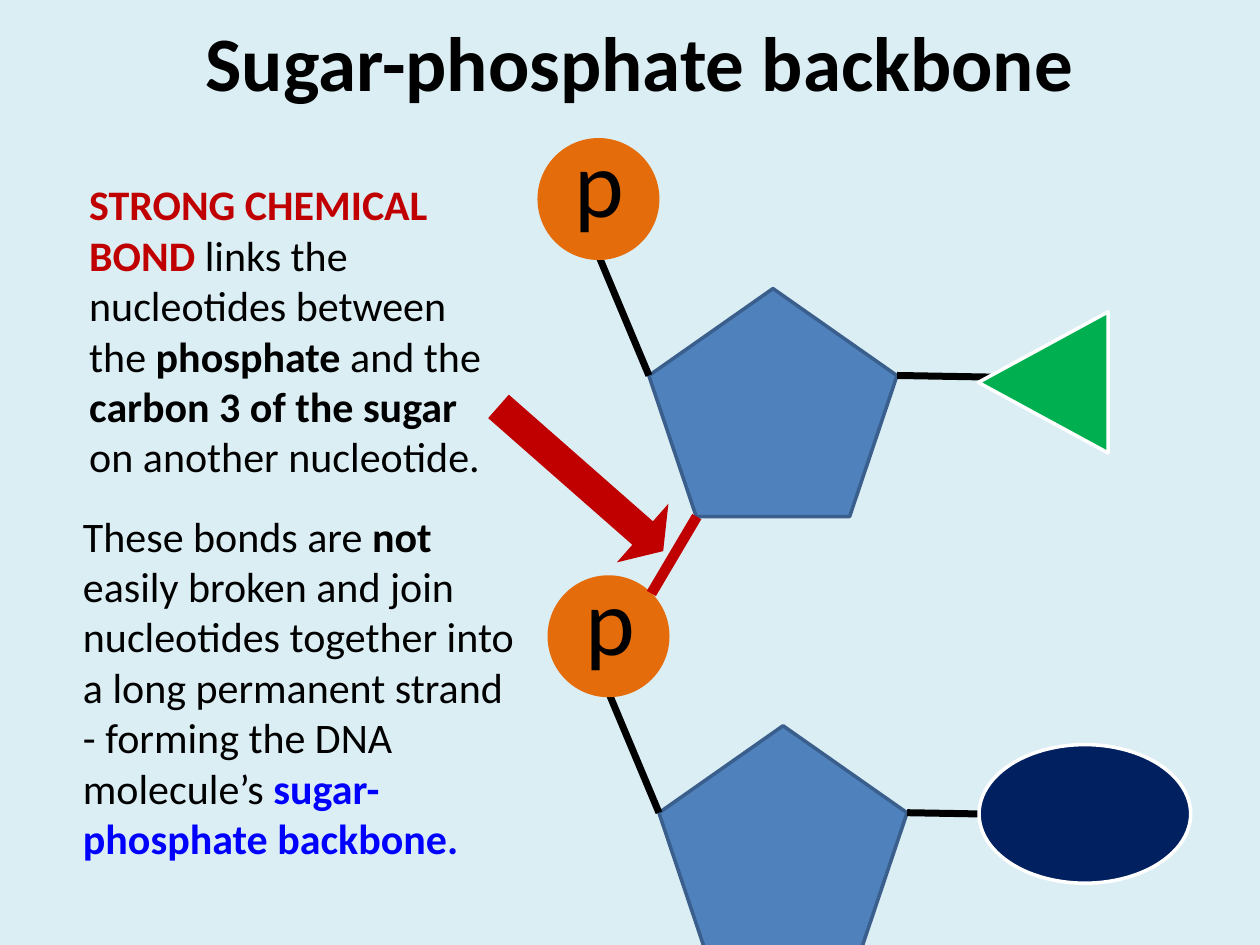
from lxml import etree
from pptx import Presentation
from pptx import util as u
from pptx.dml.color import RGBColor
from pptx.enum import shapes, text
from pptx.oxml.ns import qn

# Grid of 100 columns by 75 rows
COLUMNS, ROWS = 100, 75
CELL = u.Inches(0.1)
FONT = "Calibri"
BLACK, WHITE, RED, BLUE = "000000", "FFFFFF", "C00000", "0000FF"
SUGAR, SUGAR_EDGE, PHOSPHATE = "4F81BD", "3A5F8C", "E46C0A"
BOLD = {"bold": True}
PRESET = shapes.MSO_SHAPE


def cells(*counts):
    return [round(count * CELL) for count in counts]


def color(value):
    return RGBColor.from_string(value)


def write(paragraph, words, size, hue=BLACK, **style):
    run = paragraph.add_run()
    run.text = words
    formats = {"name": FONT, "size": u.Pt(size), "bold": False, **style}
    for key, value in formats.items():
        setattr(run.font, key, value)
    run.font.color.rgb = color(hue)


def add_text(slide, box, runs, size, wrap=True, align=text.PP_ALIGN.LEFT):
    frame = slide.shapes.add_textbox(*cells(*box)).text_frame
    frame.word_wrap = wrap
    frame.auto_size = text.MSO_AUTO_SIZE.SHAPE_TO_FIT_TEXT
    paragraph = frame.paragraphs[0]
    paragraph.alignment = align
    for words, style in runs:
        write(paragraph, words, size, **style)


def add_figure(slide, preset, box, fill, edge=None, rotation=0):
    figure = slide.shapes.add_shape(preset, *cells(*box))
    figure.shadow.inherit = False
    figure.rotation = rotation
    figure.fill.solid()
    figure.fill.fore_color.rgb = color(fill)
    if edge:
        figure.line.color.rgb = color(edge)
        figure.line.width = u.Pt(2)
    else:
        figure.line.fill.background()
    return figure


def add_bond(slide, start, end, hue=BLACK, width=4):
    bond = slide.shapes.add_connector(
        shapes.MSO_CONNECTOR.STRAIGHT, *cells(*start, *end))
    bond.line.color.rgb = color(hue)
    bond.line.width = u.Pt(width)
    etree.SubElement(bond._element.spPr, qn("a:effectLst"))


def add_nucleotide(slide, left, top):
    """Sugar with its phosphate and base bond; left and top of the sugar."""
    shoulder = top + 6.9
    add_figure(slide, PRESET.REGULAR_PENTAGON, (left, top, 19.7, 18.1),
               SUGAR, SUGAR_EDGE)
    add_bond(slide, (left, shoulder), (left - 3.9, top - 2.4))
    add_bond(slide, (left + 19.7, shoulder), (left + 28.4, shoulder + 0.15))
    add_figure(slide, PRESET.OVAL, (left - 8.7, top - 11.8, 9.4, 9.4),
               PHOSPHATE, PHOSPHATE)
    add_text(slide, (left - 6.9, top - 13.6, 6, 10.1), [("p", {})], 54,
             wrap=False, align=text.PP_ALIGN.CENTER)


def add_title(slide, words):
    title = slide.shapes.title
    title.left, title.top, title.width, title.height = cells(5.8, -1.4, 90, 12.5)
    title.text_frame.vertical_anchor = text.MSO_ANCHOR.MIDDLE
    paragraph = title.text_frame.paragraphs[0]
    paragraph.alignment = text.PP_ALIGN.CENTER
    write(paragraph, words, 44, bold=True)


def main():
    deck = Presentation()
    deck.slide_width, deck.slide_height = cells(COLUMNS, ROWS)
    slide = deck.slides.add_slide(deck.slide_layouts[5])
    slide.background.fill.solid()
    slide.background.fill.fore_color.rgb = color("DBEEF4")
    add_title(slide, "Sugar-phosphate backbone")

    # Two linked nucleotides, lower one first
    for left, top in ((52.3, 57.6), (51.5, 22.9)):
        add_nucleotide(slide, left, top)
    add_bond(slide, (51.7, 47.1), (55.3, 41), RED, 6)

    # Bases
    add_figure(slide, PRESET.ISOSCELES_TRIANGLE, (77.2, 25.2, 11.2, 10.3),
               "00B050", WHITE, 270)
    add_figure(slide, PRESET.OVAL, (77.7, 59.1, 16.8, 11), "002060", WHITE)

    # Explanation with an arrow to the strong bond
    add_text(slide, (6.1, 13.7, 34.4, 25.2), [
        ("STRONG CHEMICAL BOND ", {"hue": RED, **BOLD}),
        ("links the nucleotides between the ", {}),
        ("phosphate", BOLD),
        (" and the ", {}),
        ("carbon 3 of the sugar ", BOLD),
        ("on another nucleotide.", {}),
    ], 24)
    arrow = add_figure(slide, PRESET.RIGHT_ARROW, (37.4, 34.9, 17.4, 6.2),
                       RED, rotation=41.3)
    arrow.adjustments[0], arrow.adjustments[1] = 0.4, 0.35
    add_text(slide, (5.6, 40, 36.2, 29.3), [
        ("These bonds are ", {}),
        ("not", BOLD),
        (" easily broken and join nucleotides together into a long permanent "
         "strand - forming the DNA molecule’s ", {}),
        ("sugar-phosphate backbone.", {"hue": BLUE, **BOLD}),
    ], 24)

    deck.save("out.pptx")


if __name__ == "__main__":
    main()
